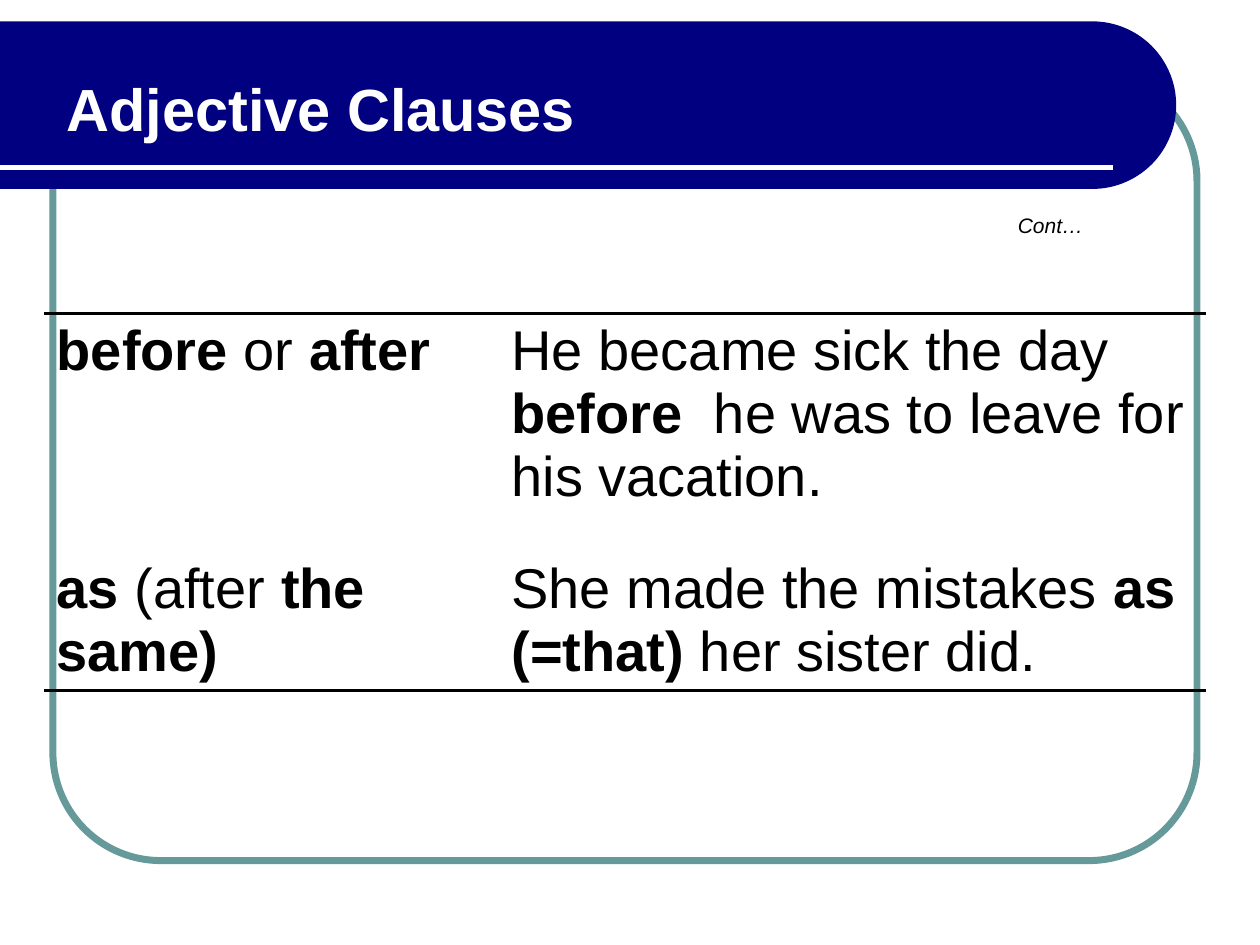
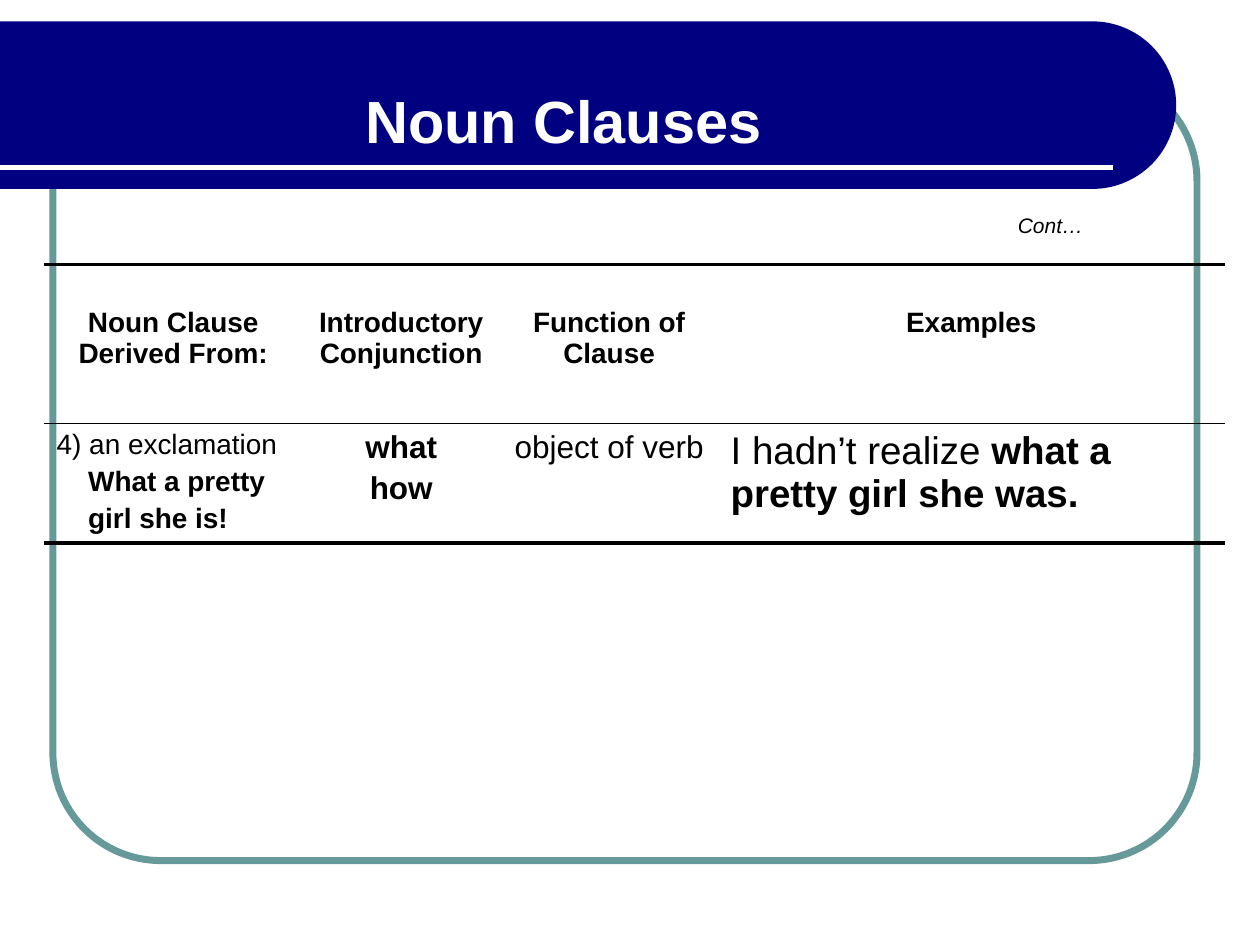
from math import cos, pi, sin

from lxml.etree import SubElement
from pptx import Presentation
from pptx.dml.color import RGBColor
from pptx.enum.shapes import MSO_CONNECTOR, MSO_SHAPE
from pptx.enum.text import MSO_ANCHOR, MSO_AUTO_SIZE, PP_ALIGN
from pptx.oxml.ns import qn
from pptx.util import Inches, Pt

COLORS = {"navy": "000080", "teal": "669999", "white": "FFFFFF", "black": "000000"}
FONT = "Arial"
NO_STYLE_NO_GRID = "{2D5ABB26-0587-4C30-8999-92F81FD0307C}"
LEFT, CENTER = PP_ALIGN.LEFT, PP_ALIGN.CENTER

# A cell is (size, alignment, paragraphs); a paragraph is a list of (text, bold) runs.
LESSONS = [
    {
        "title": "Adjective Clauses",
        "title_box": (0.43, 0.52, 4.24, 0.67),
        "table_box": (0.35, 2.49, 9.22, 2.99),
        "columns": [3.61, 5.61],
        "rows": [1.89, 1.1],
        "top_margins": [0.05, 0.05],
        "rules": [2.25, None, 2.25],
        "cells": [
            [
                (32, LEFT, [[("before ", True), ("or ", False), ("after", True)]]),
                (32, LEFT, [[("He became sick the day ", False), ("before ", True),
                             (" he was to leave for his vacation.", False)]]),
            ],
            [
                (32, LEFT, [[("as ", True), ("(after ", False), ("the same)", True)]]),
                (32, LEFT, [[("She made the mistakes ", False), ("as (=that) ", True),
                             ("her sister did.", False)]]),
            ],
        ],
    },
    {
        "title": "Noun Clauses",
        "title_box": (2.8, 0.62, 3.35, 0.67),
        "table_box": (0.35, 2.1, 9.37, 2.21),
        "columns": [2.05, 1.57, 1.73, 4.02],
        "rows": [1.26, 0.95],
        "top_margins": [0.34, 0.05],
        "rules": [2.25, 1, 2.25],
        "cells": [
            [(16, CENTER, [[(heading, True)]]) for heading in (
                "Noun Clause Derived From:", "Introductory Conjunction",
                "Function of Clause", "Examples")],
            [
                (16, LEFT, [[("4) an exclamation", False)],
                            [("What a pretty", True)], [("girl she is!", True)]]),
                (18, CENTER, [[("what", True)], [("how", True)]]),
                (18, CENTER, [[("object of verb", False)]]),
                (22, LEFT, [[("I hadn’t realize ", False),
                             ("what a pretty girl she was.", True)]]),
            ],
        ],
    },
]


def add_run(paragraph, text, size, color="black", bold=False, italic=False):
    run = paragraph.add_run()
    run.text = text
    run.font.name = FONT
    run.font.size = Pt(size)
    run.font.bold = bold
    run.font.italic = italic
    run.font.color.rgb = RGBColor.from_string(COLORS[color])


def rule_cell(cell, above, below):
    """Draw rules of the given point widths above and below; None means no rule."""
    properties = cell._tc.get_or_add_tcPr()
    for side, width in (("L", None), ("R", None), ("T", above), ("B", below)):
        border = SubElement(properties, qn(f"a:ln{side}"), w=str(Pt(width or 0)))
        if width is None:
            SubElement(border, qn("a:noFill"))
        else:
            fill = SubElement(border, qn("a:solidFill"))
            SubElement(fill, qn("a:srgbClr"), val=COLORS["black"])


prs = Presentation()
prs.slide_width, prs.slide_height = Inches(10), Inches(7.5)
layout = prs.slide_layouts.get_by_name("Title Only")
slides = [prs.slides.add_slide(layout) for _ in LESSONS]

# Backdrop: drawn once, then moved behind everything on the shared layout
shapes = slides[0].shapes
frame = shapes.add_shape(MSO_SHAPE.ROUNDED_RECTANGLE, Inches(0.42), Inches(0.58),
                         Inches(9.08), Inches(6.25))
frame.adjustments[0] = 0.137
frame.fill.background()
frame.line.color.rgb = RGBColor.from_string(COLORS["teal"])
frame.line.width = Pt(4)
frame.shadow.inherit = False

radius, cap_x, cap_y = 0.665, 8.67, 0.835
cap = [(cap_x + radius * sin(pi * step / 60), cap_y - radius * cos(pi * step / 60))
       for step in range(61)]
outline = shapes.build_freeform(0, Inches(cap_y - radius))
outline.add_line_segments([(Inches(x), Inches(y)) for x, y in cap]
                          + [(0, Inches(cap_y + radius))])
band = outline.convert_to_shape()
band.fill.solid()
band.fill.fore_color.rgb = RGBColor.from_string(COLORS["navy"])
band.line.fill.background()
band.shadow.inherit = False

underline = shapes.add_connector(MSO_CONNECTOR.STRAIGHT, 0, Inches(1.33),
                                 Inches(8.83), Inches(1.33))
underline.line.color.rgb = RGBColor.from_string(COLORS["white"])
underline.line.width = Pt(3)
SubElement(underline._element.spPr, qn("a:effectLst"))

for position, part in enumerate((frame, band, underline), start=2):
    layout.shapes._spTree.insert(position, part._element)

for slide, lesson in zip(slides, LESSONS):
    table = slide.shapes.add_table(
        len(lesson["rows"]), len(lesson["columns"]),
        *map(Inches, lesson["table_box"])).table
    table.first_row = table.horz_banding = False
    table._tbl.tblPr.find(qn("a:tableStyleId")).text = NO_STYLE_NO_GRID
    for column, width in zip(table.columns, lesson["columns"]):
        column.width = Inches(width)

    for r, row_cells in enumerate(lesson["cells"]):
        table.rows[r].height = Inches(lesson["rows"][r])
        for c, (size, alignment, paragraphs) in enumerate(row_cells):
            cell = table.cell(r, c)
            rule_cell(cell, lesson["rules"][r], lesson["rules"][r + 1])
            cell.fill.background()
            cell.margin_top = Inches(lesson["top_margins"][r])
            for p, runs in enumerate(paragraphs):
                text = cell.text_frame
                paragraph = text.add_paragraph() if p else text.paragraphs[0]
                paragraph.alignment = alignment
                if p:
                    paragraph.space_before = Pt(size * 0.2)
                    if alignment == LEFT:
                        paragraph._p.get_or_add_pPr().set("marL", str(Inches(0.25)))
                for wording, bold in runs:
                    add_run(paragraph, wording, size, bold=bold)

    continued = slide.shapes.add_textbox(Inches(7.98), Inches(1.64),
                                         Inches(0.72), Inches(0.3)).text_frame
    continued.word_wrap = False
    add_run(continued.paragraphs[0], "Cont…", 12, italic=True)

    title = slide.shapes.title
    title.left, title.top, title.width, title.height = map(Inches, lesson["title_box"])
    heading = title.text_frame
    heading.word_wrap = False
    heading.auto_size = MSO_AUTO_SIZE.NONE
    heading.vertical_anchor = MSO_ANCHOR.TOP
    heading.paragraphs[0].alignment = LEFT
    add_run(heading.paragraphs[0], lesson["title"], 34, "white", bold=True)

prs.save("out.pptx")
